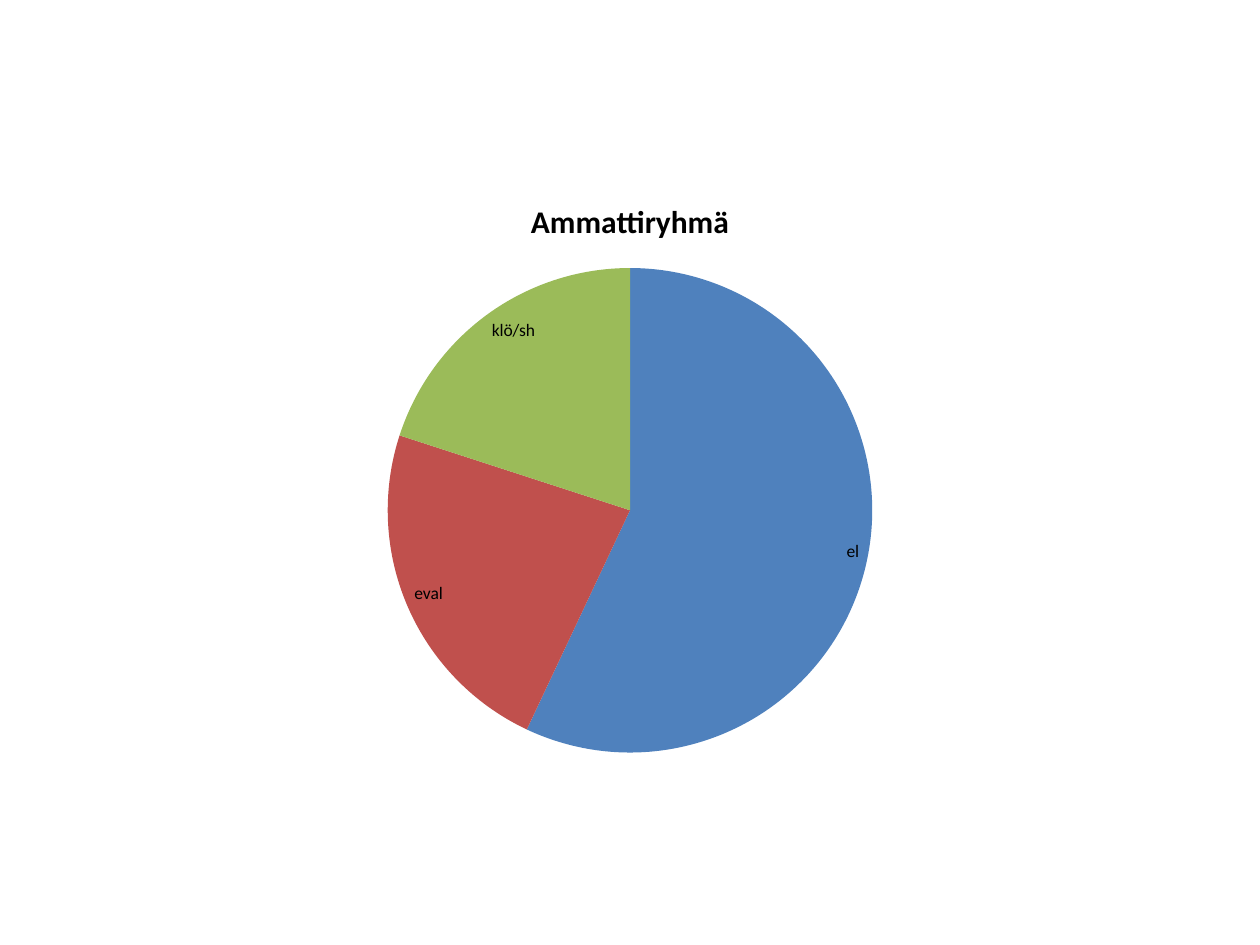
"""Build a slide with one pie chart of professional groups."""
from pptx import Presentation
from pptx import util as u
from pptx.chart import data
from pptx.dml import color
from pptx.enum import chart as kinds

TITLE = "Ammattiryhmä"
GROUPS = [("el", 57, "blue"), ("eval", 23, "red"), ("klö/sh", 20, "green")]
COLORS = {"blue": "4F81BD", "red": "C0504D", "green": "9BBB59", "text": "000000"}
FONT = "Calibri"
SLIDE_W, SLIDE_H = 720, 540
PIE_W, PIE_H = 465, 340


def style(font, size, bold=False):
    font.name, font.size, font.bold = FONT, u.Pt(size), bold
    font.color.rgb = color.RGBColor.from_string(COLORS["text"])


def add_pie(page):
    pie_data = data.CategoryChartData()
    pie_data.categories = [name for name, _, _ in GROUPS]
    pie_data.add_series("Series 1", [value for _, value, _ in GROUPS])
    left, top = (SLIDE_W - PIE_W) / 2, (SLIDE_H - PIE_H) / 2
    pie = page.shapes.add_chart(
        kinds.XL_CHART_TYPE.PIE, u.Pt(left), u.Pt(top), u.Pt(PIE_W), u.Pt(PIE_H), pie_data
    ).chart
    style(pie.font, 10)
    pie.has_legend = False
    pie.has_title = True
    span = pie.chart_title.text_frame.paragraphs[0].add_run()
    span.text = TITLE
    style(span.font, 18, True)
    pie.chart_title.include_in_layout = False

    plot = pie.plots[0]
    plot.vary_by_categories = True
    for index, (_, _, hue) in enumerate(GROUPS):
        fill = plot.series[0].points[index].format.fill
        fill.solid()
        fill.fore_color.rgb = color.RGBColor.from_string(COLORS[hue])
    labels = plot.series[0].data_labels
    labels.show_category_name = True
    labels.show_value = False
    labels.show_percentage = False
    labels.position = kinds.XL_LABEL_POSITION.INSIDE_END
    style(labels.font, 10)


def main():
    deck = Presentation()
    deck.slide_width, deck.slide_height = u.Pt(SLIDE_W), u.Pt(SLIDE_H)
    add_pie(deck.slides.add_slide(deck.slide_layouts[6]))
    deck.save("out.pptx")


if __name__ == "__main__":
    main()
